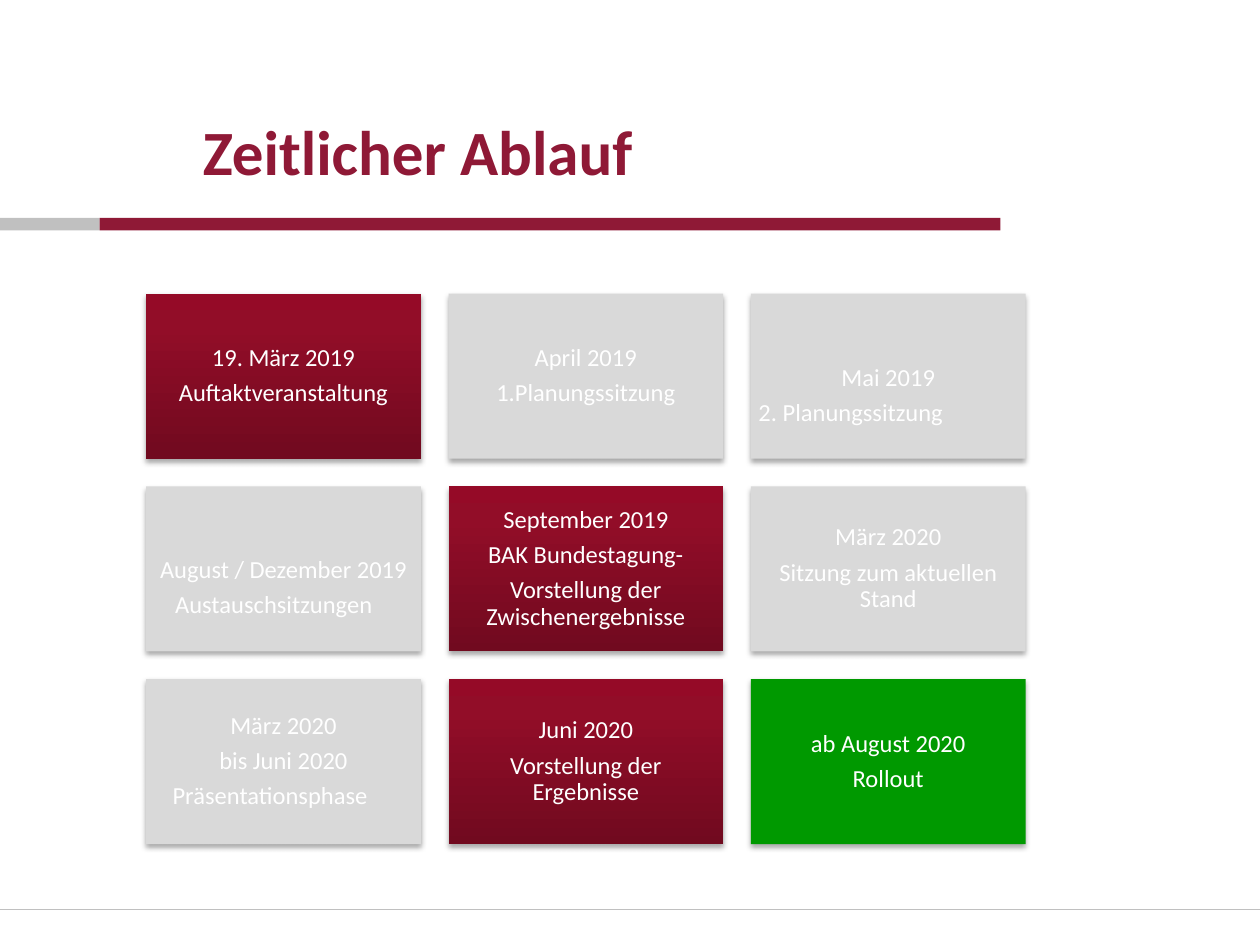
import copy
from dataclasses import dataclass

import lxml.etree
import pptx
import pptx.util
from pptx.dml.color import RGBColor
from pptx.enum.shapes import MSO_CONNECTOR, MSO_SHAPE
from pptx.enum.text import MSO_ANCHOR, PP_ALIGN
from pptx.oxml.ns import qn

Inches, Pt = pptx.util.Inches, pptx.util.Pt


@dataclass(frozen=True)
class Theme:
    font: str = "Calibri"
    title_size: int = 36
    card_size: int = 14
    accent: str = "8F1936"
    rule: str = "C0C0C0"
    muted: str = "D9D9D9"
    rollout: str = "009900"
    white: str = "FFFFFF"
    milestone: tuple = ((0, "710A1F"), (0.8, "920D28"), (1, "950A27"))


THEME = Theme()
INSET = 0.06
COLUMNS = 3


@dataclass(frozen=True)
class Step:
    lines: tuple
    fill: object = THEME.muted
    drop: float = 0          # extra inset above the text
    last_indent: object = None  # set when the last line is left-aligned


STEPS = (
    Step(("19. März 2019", "Auftaktveranstaltung"), THEME.milestone),
    Step(("April 2019", "1.Planungssitzung")),
    Step(("Mai 2019", "2. Planungssitzung"), drop=0.32, last_indent=0),
    Step(("August / Dezember 2019", "Austauschsitzungen"), drop=0.3, last_indent=0.17),
    Step(("September 2019", "BAK Bundestagung-", "Vorstellung der Zwischenergebnisse"),
         THEME.milestone),
    Step(("März 2020", "Sitzung zum aktuellen Stand")),
    Step(("März 2020", "bis Juni 2020", "Präsentationsphase"), last_indent=0.15),
    Step(("Juni 2020", "Vorstellung der Ergebnisse"), THEME.milestone),
    Step(("ab August 2020", "Rollout"), THEME.rollout),
)


def color(value):
    return RGBColor.from_string(value)


def style_font(para, size, value, bold=False):
    para.font.name = THEME.font
    para.font.size = Pt(size)
    para.font.bold = bold
    para.font.color.rgb = color(value)


def paint(shape, fill):
    """Fill with one colour, or with (position, colour) stops from bottom to top."""
    if isinstance(fill, str):
        shape.fill.solid()
        shape.fill.fore_color.rgb = color(fill)
        return
    shape.fill.gradient()
    shape.fill.gradient_angle = 90
    stops = shape.fill._fill._gradFill.find(qn("a:gsLst"))
    while len(stops) < len(fill):
        stops.append(copy.deepcopy(stops[-1]))
    for stop, (position, value) in zip(shape.fill.gradient_stops, fill):
        stop.position = position
        stop.color.rgb = color(value)


def add_rectangle(page, box, fill):
    shape = page.shapes.add_shape(MSO_SHAPE.RECTANGLE, *map(Inches, box))
    shape.shadow.inherit = False
    shape.line.fill.background()
    paint(shape, fill)
    return shape


def cast_shadow(shape):
    effects = shape._element.spPr.find(qn("a:effectLst"))
    shadow = lxml.etree.SubElement(
        effects, qn("a:outerShdw"), blurRad=str(Pt(3.1)), dist=str(Pt(1.8)),
        dir="5400000", rotWithShape="0")
    black = lxml.etree.SubElement(shadow, qn("a:srgbClr"), val="000000")
    lxml.etree.SubElement(black, qn("a:alpha"), val="35000")


def add_header(page, box):
    left, top, width, height = box
    title = page.shapes.title
    title.left, title.top = Inches(left + 1.61), Inches(top)
    title.width, title.height = Inches(5.98), Inches(1.01)
    frame = title.text_frame
    frame.text = "Zeitlicher Ablauf"
    frame.vertical_anchor = MSO_ANCHOR.BOTTOM
    frame.margin_left = frame.margin_top = frame.margin_right = frame.margin_bottom = 0
    para = frame.paragraphs[0]
    para.alignment = PP_ALIGN.LEFT
    style_font(para, THEME.title_size, THEME.accent, bold=True)

    bar, split = 0.1, 0.79
    bar_top = top + height - bar
    add_rectangle(page, (left, bar_top, split, bar), THEME.rule)
    add_rectangle(page, (left + split, bar_top, width - split, bar), THEME.accent)


def add_card(page, box, step):
    card = add_rectangle(page, box, step.fill)
    cast_shadow(card)
    frame = card.text_frame
    frame.word_wrap = True
    frame.vertical_anchor = MSO_ANCHOR.MIDDLE
    frame.margin_left = frame.margin_right = frame.margin_bottom = Inches(INSET)
    frame.margin_top = Inches(INSET + step.drop)
    frame.text = "\n".join(step.lines)
    for para in frame.paragraphs:
        para.alignment = PP_ALIGN.CENTER
        para.line_spacing = 0.9
        para.space_after = Pt(5)
        style_font(para, THEME.card_size, THEME.white)
    if step.last_indent is not None:
        para.alignment = PP_ALIGN.LEFT
        para._p.get_or_add_pPr().set("marL", str(Inches(step.last_indent)))


def add_schedule(page, box, gap=0.22):
    left, top, width, height = box
    rows = len(STEPS) // COLUMNS
    card_width = (width - gap * (COLUMNS - 1)) / COLUMNS
    card_height = (height - gap * (rows - 1)) / rows
    for index, step in enumerate(STEPS):
        row, column = divmod(index, COLUMNS)
        add_card(page, (left + column * (card_width + gap), top + row * (card_height + gap),
                        card_width, card_height), step)


def add_footer_rule(page, width, top):
    rule = page.shapes.add_connector(
        MSO_CONNECTOR.STRAIGHT, 0, Inches(top), Inches(width), Inches(top))
    rule.line.color.rgb = color(THEME.rule)
    rule.line.width = Pt(0.75)
    lxml.etree.SubElement(rule._element.spPr, qn("a:effectLst"))


def main():
    deck = pptx.Presentation()
    deck.slide_width, deck.slide_height = Inches(10), Inches(7.5)
    page = deck.slides.add_slide(deck.slide_layouts[5])
    add_header(page, (0, 0.48, 7.94, 1.35))
    add_footer_rule(page, 10, 7.22)
    add_schedule(page, (1.16, 2.33, 6.98, 4.37))
    deck.save("out.pptx")


if __name__ == "__main__":
    main()
